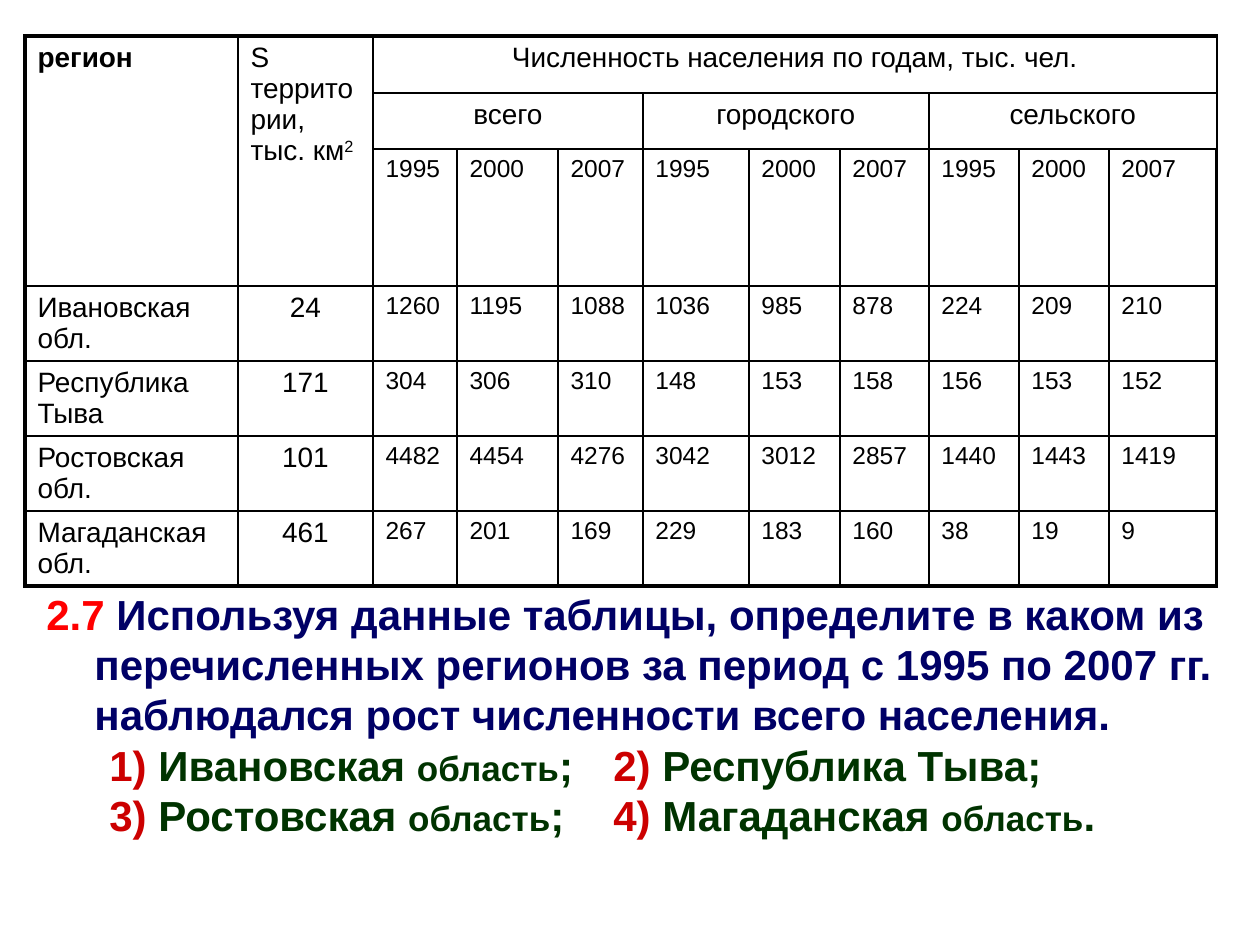
import pptx
import pptx.util
import pptx.dml.color
import pptx.enum.text
import pptx.oxml.ns
import lxml.etree

THEME = {
    "font": "Arial", "black": "000000", "red": "FF0000", "navy": "000066",
    "crimson": "CC0000", "green": "003300",
    "head": 16, "number": 14, "question": 24, "small": 20,
    "thin": 1, "thick": 2.25,
}
SCALE = 914400 / 126
CENTER = pptx.enum.text.PP_ALIGN.CENTER


def px(n):
    return pptx.util.Emu(round(n * SCALE))


def add_run(p, text, size, color="black", bold=False):
    r = p.add_run()
    r.text = text
    values = {"name": THEME["font"], "size": pptx.util.Pt(THEME[size]), "bold": bold}
    for name, value in values.items():
        setattr(r.font, name, value)
    r.font.color.rgb = pptx.dml.color.RGBColor.from_string(THEME[color])
    return r


prs = pptx.Presentation()
prs.slide_width, prs.slide_height = px(1260), px(945)
slide = prs.slides.add_slide(prs.slide_layouts[6])

widths = [213, 135, 84, 101, 85, 106, 91, 89, 90, 90, 108]
heights = [57, 56, 137, 75, 75, 75, 75]
regions = [
    ["Ивановская обл.", 24, 1260, 1195, 1088, 1036, 985, 878, 224, 209, 210],
    ["Республика Тыва", 171, 304, 306, 310, 148, 153, 158, 156, 153, 152],
    ["Ростовская обл.", 101, 4482, 4454, 4276, 3042, 3012, 2857, 1440, 1443, 1419],
    ["Магаданская обл.", 461, 267, 201, 169, 229, 183, 160, 38, 19, 9],
]
rows = [
    ["регион", "S территории, тыс. км", "Численность населения по годам, тыс. чел."] + [""] * 8,
    ["", "", "всего", "", "", "городского", "", "", "сельского", "", ""],
    ["", ""] + [1995, 2000, 2007] * 3,
] + regions

last_row, last_col = len(rows) - 1, len(widths) - 1
sp = slide.shapes.add_table(len(rows), len(widths), px(25), px(36), px(sum(widths)), px(sum(heights)))
table = sp.table
for column, width in zip(table.columns, widths):
    column.width = px(width)
for row, height in zip(table.rows, heights):
    row.height = px(height)

merges = [(0, 0, 2, 0), (0, 1, 2, 1), (0, 2, 0, 10), (1, 2, 1, 4), (1, 5, 1, 7), (1, 8, 1, 10)]
for top, left, bottom, right in merges:
    table.cell(top, left).merge(table.cell(bottom, right))

for i, row in enumerate(rows):
    for j, value in enumerate(row):
        cell = table.cell(i, j)
        tcPr = cell._tc.get_or_add_tcPr()
        edges = {"lnL": j == 0, "lnR": j == last_col, "lnT": i == 0, "lnB": i == last_row}
        for tag, outer in edges.items():
            weight = pptx.util.Pt(THEME["thick" if outer else "thin"])
            ln = lxml.etree.SubElement(tcPr, pptx.oxml.ns.qn("a:" + tag), w=str(int(weight)))
            fill = lxml.etree.SubElement(ln, pptx.oxml.ns.qn("a:solidFill"))
            lxml.etree.SubElement(fill, pptx.oxml.ns.qn("a:srgbClr"), val=THEME["black"])
        cell.fill.background()
        if value == "":
            continue
        p = cell.text_frame.paragraphs[0]
        size = "number" if i >= 2 and j >= 2 else "head"
        add_run(p, str(value), size, bold=(i == j == 0))
        if (i < 2 and j >= 2) or (i > 2 and j == 1):
            p.alignment = CENTER

r = add_run(table.cell(0, 1).text_frame.paragraphs[0], "2", "head")
r._r.get_or_add_rPr().set("baseline", "30000")

sp = slide.shapes.add_textbox(px(34), px(582), px(1191), px(265))
tf = sp.text_frame
tf.word_wrap = True
p = tf.paragraphs[0]
pPr = p._p.get_or_add_pPr()
pPr.set("marL", str(px(48)))
pPr.set("indent", str(px(-48)))
add_run(p, "2.7", "question", "red", True)
add_run(p, " Используя данные таблицы, определите в каком из перечисленных регионов "
           "за период с 1995 по 2007 гг. наблюдался рост численности всего населения.",
        "question", "navy", True)

answers = [
    (608, [("1)", "Ивановская ", "область", ";\t"), ("2)", "Республика Тыва", "", ";")]),
    (611, [("3)", "Ростовская ", "область", ";\t"), ("4)", "Магаданская ", "область", ".")]),
]
for tab, options in answers:
    p = tf.add_paragraph()
    p.level = 1
    pPr = p._p.get_or_add_pPr()
    pPr.set("marL", "0")
    pPr.set("indent", str(px(63)))
    tabs = lxml.etree.SubElement(pPr, pptx.oxml.ns.qn("a:tabLst"))
    lxml.etree.SubElement(tabs, pptx.oxml.ns.qn("a:tab"), pos=str(px(tab)), algn="l")
    for number, name, kind, end in options:
        add_run(p, number, "question", "crimson", True)
        add_run(p, " " + name, "question", "green", True)
        if kind:
            add_run(p, kind, "small", "green", True)
        add_run(p, end, "question", "green", True)

prs.save("out.pptx")
